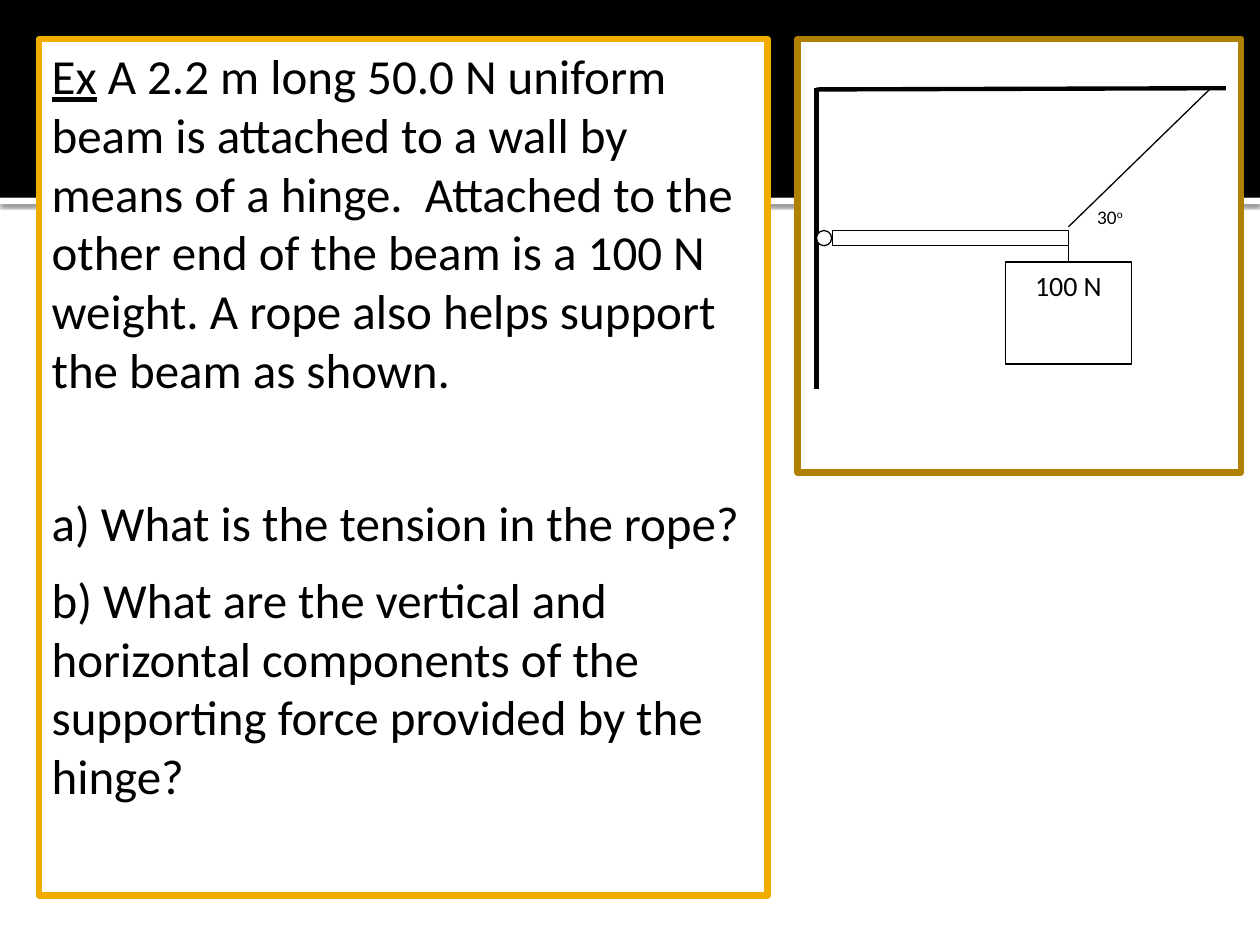
from dataclasses import dataclass

from lxml.etree import SubElement
from pptx import Presentation
from pptx.dml.color import RGBColor
from pptx.enum.shapes import MSO_CONNECTOR, MSO_SHAPE
from pptx.enum.text import MSO_ANCHOR, MSO_AUTO_SIZE, PP_ALIGN
from pptx.oxml import parse_xml
from pptx.oxml.ns import nsdecls, qn
from pptx.util import Emu, Pt

BLACK = RGBColor(0x00, 0x00, 0x00)
WHITE = RGBColor(0xFF, 0xFF, 0xFF)
GOLD = RGBColor(0xF0, 0xAD, 0x00)
BROWN = RGBColor(0xB2, 0x80, 0x00)
FONT = "Calibri"
SCALE = 9144
THIN, BOLD, FRAME = 0.75, 2.5, 3.78
SHADE = (
    f'<a:effectLst {nsdecls("a")}><a:outerShdw blurRad="31750" dist="10160" dir="5400000">'
    '<a:srgbClr val="000000"><a:alpha val="60000"/></a:srgbClr></a:outerShdw></a:effectLst>'
)


@dataclass(frozen=True)
class Box:
    x: int
    y: int
    w: int
    h: int
    fill: RGBColor = WHITE
    line: RGBColor | None = BLACK
    width: float = THIN
    kind: MSO_SHAPE = MSO_SHAPE.RECTANGLE


@dataclass(frozen=True)
class Line:
    x1: int
    y1: int
    x2: int
    y2: int
    width: float = THIN


BANDS = [Box(0, 157, 1000, 5, line=None), Box(0, 0, 1000, 157, BLACK, None)]
PANEL = Box(31, 31, 578, 680, line=GOLD, width=FRAME)
SCENE = Box(633, 31, 352, 344, line=BROWN, width=FRAME)
BEAM = Box(661, 183, 187, 12)
HINGE = Box(648, 183, 12, 12, kind=MSO_SHAPE.OVAL)
LOAD = Box(798, 208, 100, 81)
ANGLE = Box(861, 158, 50, 37)
WALL = Line(648, 70, 648, 309, BOLD)
ROOF = Line(648, 71, 973, 70, BOLD)
ROPE = Line(848, 180, 961, 70)
CORD = Line(848, 195, 848, 208)

TASK = [
    " A 2.2 m long 50.0 N uniform beam is attached to a wall by means of a hinge.  "
    "Attached to the other end of the beam is a 100 N weight. "
    "A rope also helps support the beam as shown.",
    "a) What is the tension in the rope?",
    "b) What are the vertical and horizontal components of the supporting force "
    "provided by the hinge?",
]


def px(n: int) -> Emu:
    """Turn whole px into EMU."""
    return Emu(n * SCALE)


def area(box: Box) -> list[Emu]:
    """Give left, top, width and height in EMU."""
    return [px(n) for n in (box.x, box.y, box.w, box.h)]


def paint(shape, box: Box) -> None:
    """Set the fill and outline of a shape."""
    shape.fill.solid()
    shape.fill.fore_color.rgb = box.fill
    if box.line is None:
        shape.line.fill.background()
    else:
        shape.line.color.rgb = box.line
        shape.line.width = Pt(box.width)


def draw(shapes, box: Box):
    """Add a flat preset shape."""
    shape = shapes.add_shape(box.kind, *area(box))
    shape.shadow.inherit = False
    paint(shape, box)
    return shape


def rule(shapes, line: Line):
    """Add a black straight connector without shadow."""
    ends = [px(n) for n in (line.x1, line.y1, line.x2, line.y2)]
    link = shapes.add_connector(MSO_CONNECTOR.STRAIGHT, *ends)
    link.line.color.rgb = BLACK
    link.line.width = Pt(line.width)
    SubElement(link.element.spPr, qn("a:effectLst"))
    return link


def style(para, size: int, before: int = 0) -> None:
    """Format a paragraph and its runs."""
    para.space_before, para.space_after = Pt(before), Pt(10)
    for run in para.runs:
        run.font.name, run.font.size = FONT, Pt(size)
        run.font.color.rgb = BLACK


def write(slide) -> None:
    """Fill the body placeholder with the task."""
    body = slide.placeholders[1]
    slide.shapes.title.element.getparent().remove(slide.shapes.title.element)
    slide.shapes.element.append(body.element)
    body.left, body.top, body.width, body.height = area(PANEL)
    paint(body, PANEL)
    frame = body.text_frame
    frame.word_wrap, frame.auto_size = True, MSO_AUTO_SIZE.NONE
    frame.vertical_anchor = MSO_ANCHOR.TOP
    frame.text = "Ex"
    frame.paragraphs[0].add_run().text = TASK[0]
    for text in TASK[1:]:
        frame.add_paragraph().text = text
    for para, gap in zip(frame.paragraphs, (0, 44, 0)):
        style(para, 28, gap)
        props = para._p.get_or_add_pPr()
        props.set("marL", "0")
        props.set("indent", "0")
        SubElement(props, qn("a:buNone"))
    frame.paragraphs[0].runs[0].font.underline = True


def sketch(shapes) -> None:
    """Draw the beam, its supports and its load."""
    for line in (WALL, ROOF):
        rule(shapes, line)
    for box in (BEAM, HINGE):
        draw(shapes, box)
    rule(shapes, ROPE)
    cord = rule(shapes, CORD)
    load = draw(shapes, LOAD)
    cord.end_connect(load, 0)
    load.text_frame.text = "100 N"
    load.text_frame.vertical_anchor = MSO_ANCHOR.TOP
    load.text_frame.paragraphs[0].alignment = PP_ALIGN.CENTER
    style(load.text_frame.paragraphs[0], 16)
    label = shapes.add_textbox(*area(ANGLE)).text_frame
    label.word_wrap = True
    label.text = "30"
    degree = label.paragraphs[0].add_run()
    degree.text = "o"
    style(label.paragraphs[0], 11)
    degree.font._element.set("baseline", "30000")


def main() -> None:
    """Build and save the slide."""
    deck = Presentation()
    deck.slide_width, deck.slide_height = px(1000), px(750)
    slide = deck.slides.add_slide(deck.slide_layouts[1])
    strip, _ = [draw(slide.shapes, band) for band in BANDS]
    props = strip.element.spPr
    props.replace(props.find(qn("a:effectLst")), parse_xml(SHADE))
    write(slide)
    draw(slide.shapes, SCENE)
    sketch(slide.shapes.add_group_shape().shapes)
    deck.save("out.pptx")


if __name__ == "__main__":
    main()
